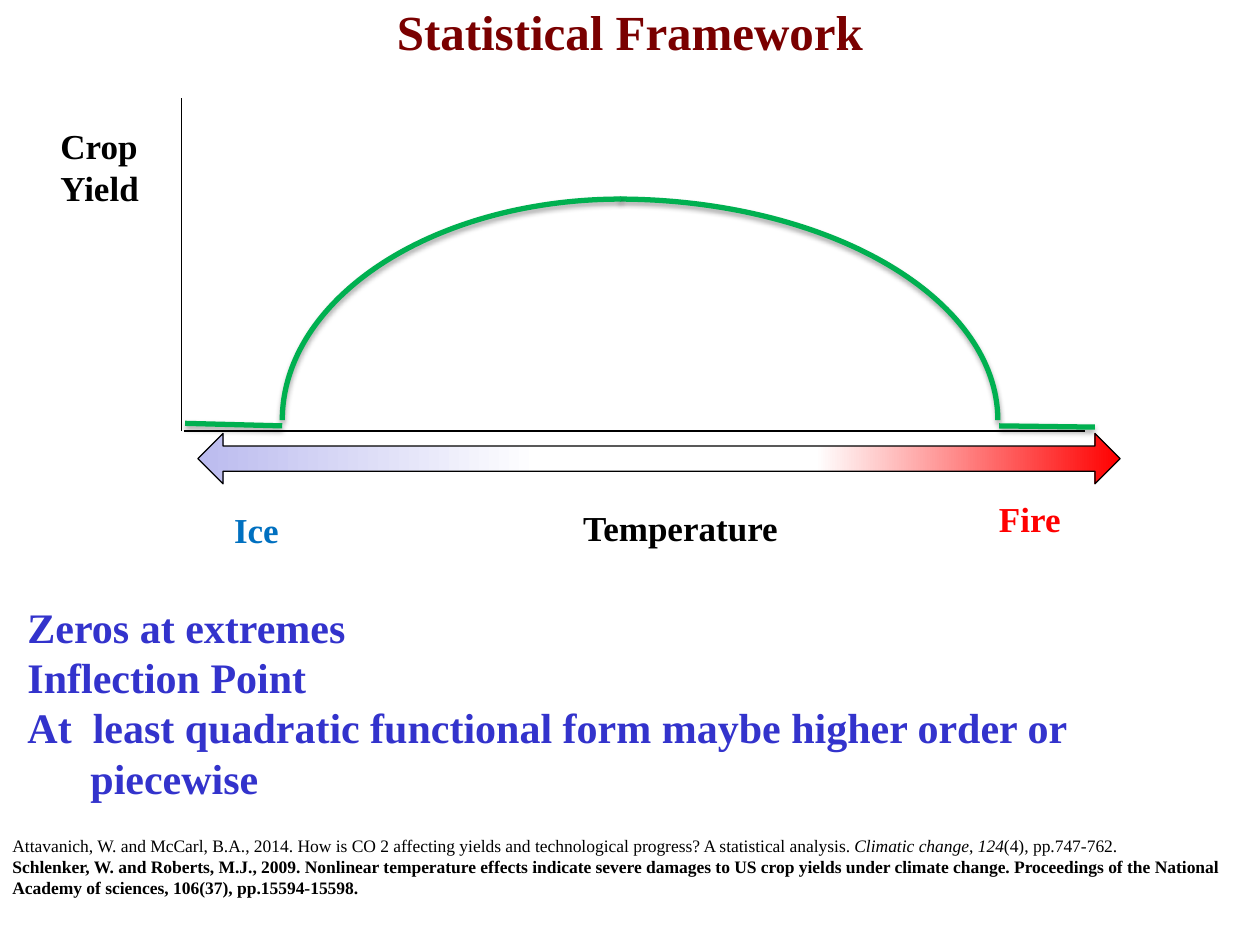
from lxml.etree import SubElement
from pptx import Presentation
from pptx.dml.color import RGBColor
from pptx.enum.shapes import MSO_CONNECTOR as Connector, MSO_SHAPE as Shape
from pptx.enum.text import MSO_ANCHOR as Anchor, PP_ALIGN as Align
from pptx.oxml.ns import qn
from pptx.util import Inches, Pt

MAROON = RGBColor(0x7A, 0x00, 0x00)
BLACK = RGBColor(0x00, 0x00, 0x00)
GREEN = RGBColor(0x00, 0xB0, 0x50)
RED = RGBColor(0xFF, 0x00, 0x00)
WHITE = RGBColor(0xFF, 0xFF, 0xFF)
LAVENDER = RGBColor(0xBB, 0xBB, 0xEF)
ICE_BLUE = RGBColor(0x00, 0x70, 0xC0)
INDIGO = RGBColor(0x33, 0x33, 0xCC)


def add_color(parent, color):
    return SubElement(parent, qn("a:srgbClr"), val=str(color))


class SlideBuilder:
    font = "Times New Roman"
    axis_width = Pt(0.75)
    curve_width = Pt(3)

    def __init__(self, slide):
        self.slide = slide

    def text(self, box, lines, size, color, bold=True, wrap=True,
             align=Align.LEFT, anchor=Anchor.TOP):
        frame = self.slide.shapes.add_textbox(*map(Inches, box)).text_frame
        frame.word_wrap = wrap
        frame.vertical_anchor = anchor
        frame.text = "\n".join(lines)
        for paragraph in frame.paragraphs:
            paragraph.alignment = align
            for run in paragraph.runs:
                self.format(run, size, color, bold)
        return frame

    def format(self, run, size, color, bold, italic=False):
        run.font.name = self.font
        run.font.size = Pt(size)
        run.font.color.rgb = color
        run.font.bold = bold
        run.font.italic = italic

    def label(self, box, lines, color=BLACK):
        return self.text(box, lines, 20, color, wrap=False)

    def soft_shadow(self, effects):
        shadow = SubElement(effects, qn("a:outerShdw"), blurRad=str(Pt(3.1)),
                            dist=str(Pt(1.8)), dir="5400000", rotWithShape="0")
        SubElement(add_color(shadow, BLACK), qn("a:alpha"), val="35000")

    def line(self, start, end, color=BLACK, width=axis_width, shadow=False):
        points = map(Inches, (*start, *end))
        line = self.slide.shapes.add_connector(Connector.STRAIGHT, *points)
        line.line.color.rgb = color
        line.line.width = width
        effects = SubElement(line._element.spPr, qn("a:effectLst"))
        if shadow:
            self.soft_shadow(effects)

    def tail(self, start, end):
        self.line(start, end, GREEN, self.curve_width, shadow=True)

    def shape(self, kind, box, color, width):
        shape = self.slide.shapes.add_shape(kind, *map(Inches, box))
        shape.line.color.rgb = color
        shape.line.width = width
        shape.shadow.inherit = False
        return shape

    def arc(self, box, start=None, flipped=False):
        arc = self.shape(Shape.ARC, box, GREEN, self.curve_width)
        arc.fill.background()
        if start is not None:
            arc.adjustments[0] = start
        if flipped:
            arc._element.spPr.find(qn("a:xfrm")).set("flipH", "1")
        self.soft_shadow(arc._element.spPr.find(qn("a:effectLst")))

    def gradient_arrow(self, box, stops):
        arrow = self.shape(Shape.LEFT_RIGHT_ARROW, box, BLACK, self.axis_width)
        arrow.fill.gradient()
        arrow.fill.gradient_angle = 180
        stop_list = arrow._element.spPr.find(qn("a:gradFill")).find(qn("a:gsLst"))
        for old_stop in list(stop_list):
            stop_list.remove(old_stop)
        for percent, color in stops:
            add_color(SubElement(stop_list, qn("a:gs"), pos=str(percent * 1000)), color)


def main():
    presentation = Presentation()
    presentation.slide_width = Inches(10)
    presentation.slide_height = Inches(7.5)
    builder = SlideBuilder(presentation.slides.add_slide(presentation.slide_layouts[6]))

    builder.text((0.75, 0.03, 8.5, 0.43), ["Statistical Framework"], 28, MAROON,
                 align=Align.CENTER, anchor=Anchor.MIDDLE)

    builder.arc((1.89, 1.58, 6.03, 3.51), start=162.29)
    builder.arc((2.24, 1.58, 5.38, 3.51), flipped=True)
    builder.line((1.44, 0.78), (1.44, 3.42))
    builder.line((8.61, 3.42), (1.46, 3.42))
    builder.tail((2.24, 3.38), (1.47, 3.36))
    builder.tail((8.69, 3.39), (7.93, 3.38))

    builder.label((4.53, 3.97, 1.76, 0.44), ["Temperature"])
    builder.label((0.38, 0.94, 0.89, 0.77), ["Crop", "Yield"])
    builder.gradient_arrow((1.57, 3.44, 7.32, 0.4),
                           [(0, RED), (33, WHITE), (63, WHITE), (100, LAVENDER)])
    builder.label((7.83, 3.9, 0.69, 0.44), ["Fire"], RED)
    builder.label((1.76, 3.99, 0.56, 0.44), ["Ice"], ICE_BLUE)

    findings = builder.text(
        (0.12, 4.71, 9.64, 1.72),
        ["Zeros at extremes", "Inflection Point",
         "At  least quadratic functional form maybe higher order or piecewise"],
        24, INDIGO, anchor=Anchor.MIDDLE)
    hanging = findings.paragraphs[-1]._p.get_or_add_pPr()
    hanging.set("marL", str(Inches(0.5)))
    hanging.set("indent", str(Inches(-0.5)))

    references = builder.text(
        (0, 6.58, 10.09, 0.61),
        ["Attavanich, W. and McCarl, B.A., 2014. How is CO 2 affecting yields and "
         "technological progress? A statistical analysis.\u00a0",
         "Schlenker, W. and Roberts, M.J., 2009. Nonlinear temperature effects indicate "
         "severe damages to US crop yields under climate change. Proceedings of the "
         "National Academy of sciences, 106(37), pp.15594-15598."],
        10, BLACK, bold=False)
    first, second = references.paragraphs
    second.runs[0].font.bold = True
    for part, italic in (("Climatic change", True), (",\u00a0", False),
                         ("124", True), ("(4), pp.747-762.", False)):
        run = first.add_run()
        run.text = part
        builder.format(run, 10, BLACK, False, italic)

    presentation.save("out.pptx")


if __name__ == "__main__":
    main()
